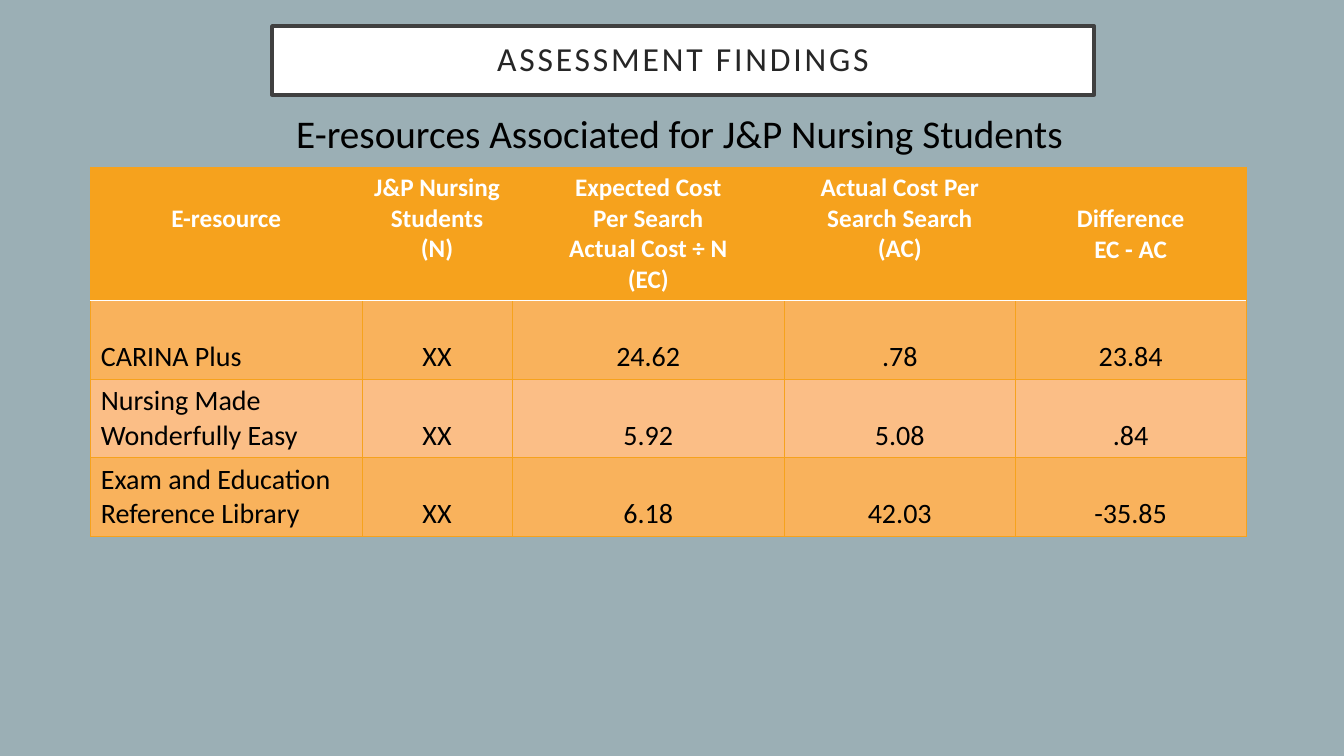
from lxml import etree
from pptx import Presentation
from pptx import util as u
from pptx.dml.color import RGBColor
from pptx.enum import shapes, text
from pptx.oxml.ns import qn

ORANGE, WHITE, BLACK = "F6A21D", "FFFFFF", "000000"
BANDS = ["F9B25C", "FBBE86"]
CENTER, LEFT = text.PP_ALIGN.CENTER, text.PP_ALIGN.LEFT
TOP, BOTTOM = text.MSO_ANCHOR.TOP, text.MSO_ANCHOR.BOTTOM

HEADERS = [
    "E-resource",
    "J&P Nursing Students\n(N)",
    "Expected Cost\nPer Search\nActual Cost ÷ N\n(EC)",
    "Actual Cost Per Search Search\n(AC)",
    "Difference\nEC - AC",
]
LOWERED_HEADERS = ("E-resource", "Difference\nEC - AC")
ROWS = [
    ["CARINA Plus", "XX", "24.62", ".78", "23.84"],
    ["Nursing Made Wonderfully Easy", "XX", "5.92", "5.08", ".84"],
    ["Exam and Education Reference Library", "XX", "6.18", "42.03", "-35.85"],
]
COLUMN_WIDTHS = [2.69, 1.49, 2.7, 2.29, 2.29]
ROW_HEIGHTS = [1.32] + [0.78] * len(ROWS)


def rgb(value):
    return RGBColor.from_string(value)


class Deck:
    font = "Calibri"

    def __init__(self, width, height, background):
        self.prs = Presentation()
        self.prs.slide_width = u.Inches(width)
        self.prs.slide_height = u.Inches(height)
        self.s = self.prs.slides.add_slide(self.prs.slide_layouts[6])
        self.s.background.fill.solid()
        self.s.background.fill.fore_color.rgb = rgb(background)

    def set_text(self, tf, words, size, color, align=LEFT, bold=False):
        tf.text = words
        tf.word_wrap = True
        for p in tf.paragraphs:
            p.alignment = align
            for r in p.runs:
                r.font.name = self.font
                r.font.size = u.Pt(size)
                r.font.bold = bold
                r.font.color.rgb = rgb(color)

    def title(self, words, box):
        sp = self.s.shapes.add_shape(shapes.MSO_SHAPE.RECTANGLE, *map(u.Inches, box))
        sp.shadow.inherit = False
        sp.fill.solid()
        sp.fill.fore_color.rgb = rgb(WHITE)
        sp.line.color.rgb = rgb("404040")
        sp.line.width = u.Pt(3)
        tf = sp.text_frame
        tf.margin_left = tf.margin_right = u.Inches(0.3)
        tf.margin_top = tf.margin_bottom = u.Inches(0.2)
        tf.vertical_anchor = text.MSO_ANCHOR.MIDDLE
        self.set_text(tf, words, 24, "262626", CENTER)
        p = tf.paragraphs[0]
        p.line_spacing = 0.9
        p.runs[0].font._element.set("spc", "200")

    def label(self, words, box, size):
        sp = self.s.shapes.add_textbox(*map(u.Inches, box))
        self.set_text(sp.text_frame, words, size, BLACK)

    def borders(self, cell, top, bottom):
        props = cell._tc.get_or_add_tcPr()
        edges = {"L": ORANGE, "R": ORANGE, "T": top, "B": bottom}
        for i, (side, color) in enumerate(edges.items()):
            width = u.Pt(1 if color == WHITE else 0.5)
            ln = etree.Element(qn(f"a:ln{side}"), w=str(width))
            fill = etree.SubElement(ln, qn("a:solidFill"))
            etree.SubElement(fill, qn("a:srgbClr"), val=color)
            props.insert(i, ln)

    def cell(self, cell, words, row, column):
        header = row == 0
        cell.fill.solid()
        cell.fill.fore_color.rgb = rgb(ORANGE if header else BANDS[(row - 1) % 2])
        cell.vertical_anchor = TOP if header else BOTTOM
        if words in LOWERED_HEADERS:
            cell.margin_top = u.Inches(0.36)
        align = CENTER if header or column else LEFT
        self.set_text(cell.text_frame, words, 18 if header else 20,
                      WHITE if header else BLACK, align, header)
        self.borders(cell, WHITE if row == 1 else ORANGE, WHITE if header else ORANGE)

    def table(self, rows, left, top, widths, heights):
        box = (left, top, sum(widths), sum(heights))
        table = self.s.shapes.add_table(len(rows), len(widths), *map(u.Inches, box)).table
        for column, width in zip(table.columns, widths):
            column.width = u.Inches(width)
        for i, (values, height) in enumerate(zip(rows, heights)):
            table.rows[i].height = u.Inches(height)
            for j, words in enumerate(values):
                self.cell(table.cell(i, j), words, i, j)


def main():
    deck = Deck(13.33, 7.5, "9BAFB5")
    deck.title("ASSESSMENT FINDINGS", (2.7, 0.26, 8.15, 0.68))
    deck.table([HEADERS] + ROWS, 0.9, 1.66, COLUMN_WIDTHS, ROW_HEIGHTS)
    deck.label("E-resources Associated for J&P Nursing Students", (2.84, 1.04, 8.84, 0.57), 28)
    deck.prs.save("out.pptx")


if __name__ == "__main__":
    main()
